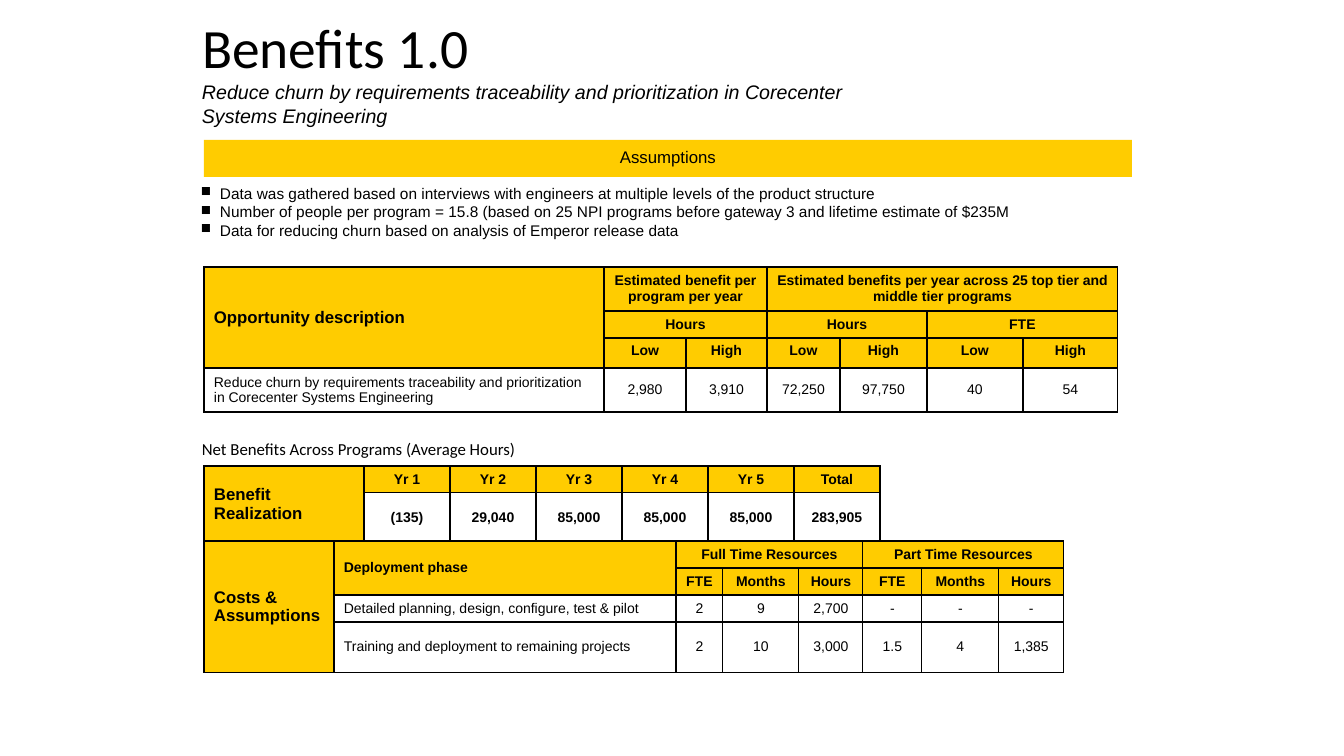
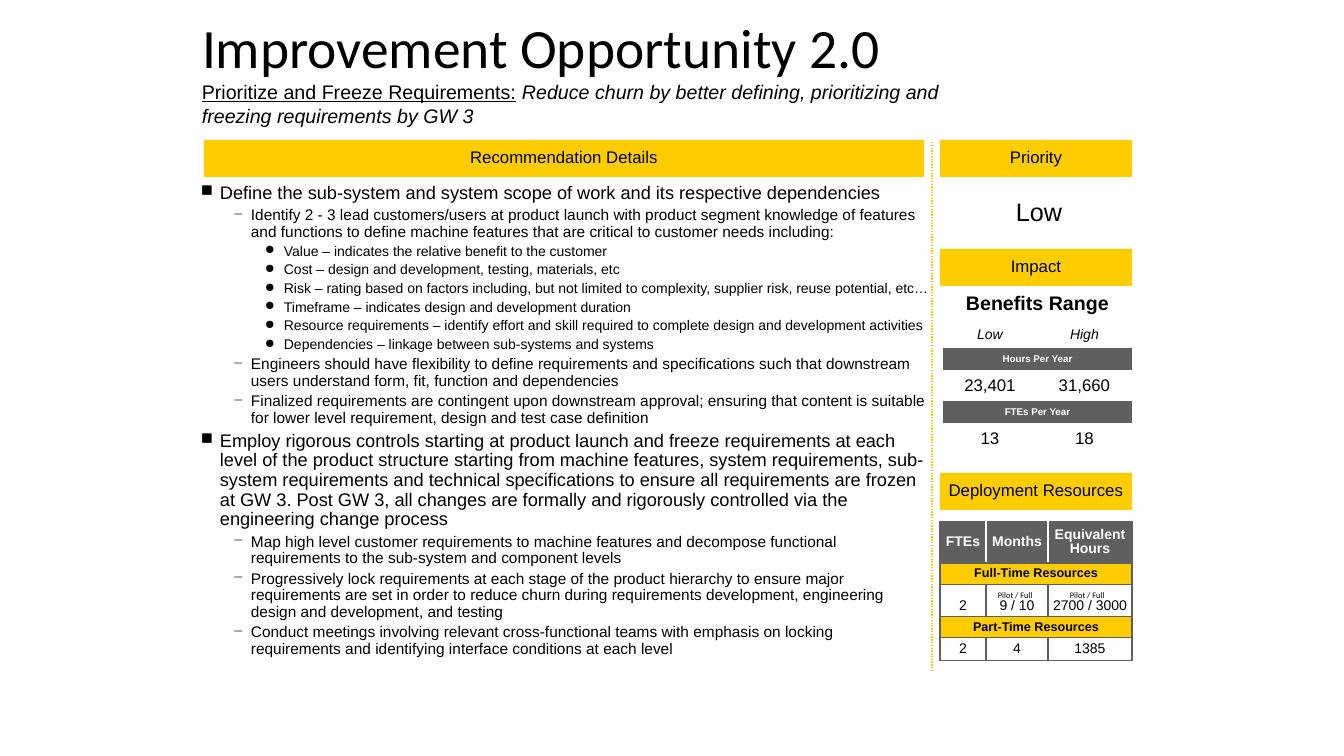
import dataclasses
import functools

import lxml.etree
import pptx
import pptx.dml.color
import pptx.enum.dml
import pptx.enum.shapes
import pptx.enum.text
import pptx.oxml.ns
import pptx.util

PX = 914400 / 100.8
YELLOW, GREY, BLACK, WHITE = "FFCC00", "5F5F5F", "000000", "FFFFFF"
NO_STYLE = "{2D5ABB26-0587-4C30-8999-92F81FD0307C}"
BAND_HEIGHT = 37
LEFT, RIGHT_COLUMN, RIGHT_EDGE = 204, 940, 1132
BAND_TOP = 140
LEVELS = {
    1: ("■", 31, 19, 13),
    2: ("−", 62, 18, 11),
    3: ("●", 95, 19, 10),
}
Align = pptx.enum.text.PP_ALIGN
Anchor = pptx.enum.text.MSO_ANCHOR
qn = pptx.oxml.ns.qn


def px(n):
    return pptx.util.Emu(round(n * PX))


def color(value):
    return pptx.dml.color.RGBColor.from_string(value)


def child(parent, tag, **attributes):
    return lxml.etree.SubElement(parent, qn(tag), attributes)


def format_text(tf, size, font="Arial", ink=BLACK, bold=False, italic=False,
                align=Align.LEFT, spacing=None):
    for p in tf.paragraphs:
        p.alignment = align
        p.line_spacing = spacing
        for r in p.runs:
            r.font.name = font
            r.font.size = pptx.util.Pt(size)
            r.font.bold = bold
            r.font.italic = italic
            r.font.color.rgb = color(ink)


def set_margins(target, x, y):
    target.margin_left = target.margin_right = px(x)
    target.margin_top = target.margin_bottom = px(y)


def text_box(s, box, text, size, wrap=True, anchor=Anchor.TOP, **look):
    tf = s.shapes.add_textbox(*map(px, box)).text_frame
    tf.word_wrap = wrap
    tf.vertical_anchor = anchor
    tf.text = text
    format_text(tf, size, **look)
    return tf


def heading(s, title, subtitle, width, lead=""):
    sp = s.shapes.title
    sp.left, sp.top, sp.width, sp.height = map(px, (192, 17, 789, 68))
    tf = sp.text_frame
    tf.text = title
    tf.auto_size = pptx.enum.text.MSO_AUTO_SIZE.NONE
    tf.vertical_anchor = Anchor.MIDDLE
    format_text(tf, 39.6, "Calibri", spacing=0.9)

    tf = text_box(s, (192, 75, width, 57), lead, 14)
    p = tf.paragraphs[0]
    for r in p.runs:
        r.font.underline = True
    r = p.add_run()
    r.text = subtitle
    r.font.name, r.font.size, r.font.italic = "Arial", pptx.util.Pt(14), True
    r.font.color.rgb = color(BLACK)


def band(s, left, top, right, text):
    sp = s.shapes.add_shape(pptx.enum.shapes.MSO_SHAPE.RECTANGLE,
                            *map(px, (left, top, right - left, BAND_HEIGHT)))
    sp.shadow.inherit = False
    sp.fill.solid()
    sp.fill.fore_color.rgb = color(YELLOW)
    sp.line.fill.background()
    tf = sp.text_frame
    set_margins(tf, 0, 8)
    tf.vertical_anchor = Anchor.MIDDLE
    tf.text = text
    format_text(tf, 12, align=Align.CENTER, spacing=0.9)


def bullet_list(s, box, items, size=None, spacing=None, gap=0):
    tf = s.shapes.add_textbox(*map(px, box)).text_frame
    tf.word_wrap = True
    tf.margin_right = px(3)
    tf.text = "\n".join(text for level, text in items)
    format_text(tf, 11, spacing=spacing)
    for i, (p, (level, text)) in enumerate(zip(tf.paragraphs, items)):
        mark, indent, hanging, level_size = LEVELS[level]
        points = size or level_size
        p.runs[0].font.size = pptx.util.Pt(points)
        p.space_before = pptx.util.Pt(points * gap if i else 0)
        pPr = p._p.get_or_add_pPr()
        pPr.set("marL", str(px(indent)))
        pPr.set("indent", str(-px(hanging)))
        child(pPr, "a:buSzPct", val="90000")
        child(pPr, "a:buChar", char=mark)


@dataclasses.dataclass
class Cell:
    text: str = ""
    span: tuple = (1, 1)
    size: float = 10
    bold: bool = False
    italic: bool = False
    ink: str = BLACK
    fill: str = ""
    align: Align = Align.CENTER
    anchor: Anchor = Anchor.MIDDLE
    spacing: float = None


Head = functools.partial(Cell, bold=True, fill=YELLOW)
RowHead = functools.partial(Head, size=12, align=Align.LEFT)
Label = functools.partial(Cell, align=Align.LEFT)
HeadGrey = functools.partial(Cell, bold=True, fill=GREY, ink=WHITE)


def set_borders(cell, sides):
    tcPr = cell._tc.get_or_add_tcPr()
    for side in "LRTB":
        ln = child(tcPr, "a:ln" + side, w="12700")
        child(child(ln, "a:solidFill"), "a:srgbClr", val=sides[side])


def table(s, left, top, widths, heights, rows, border=None, margins=(10, 5),
          inner_head=None):
    box = left, top, sum(widths), sum(heights)
    frame = s.shapes.add_table(len(heights), len(widths), *map(px, box))
    t = frame.table
    t.first_row = t.horz_banding = False
    t._tbl.tblPr.find(qn("a:tableStyleId")).text = NO_STYLE
    for column, width in zip(t.columns, widths):
        column.width = px(width)
    for row, height in zip(t.rows, heights):
        row.height = px(height)
    for i, row in enumerate(rows):
        for j, content in enumerate(row):
            cell = t.cell(i, j)
            if border:
                sides = dict.fromkeys("LRTB", border)
                if inner_head and i == 0:
                    sides["L"] = inner_head if j else border
                    sides["R"] = inner_head if j < len(row) - 1 else border
                set_borders(cell, sides)
            if content is None:
                continue
            down, across = content.span
            if content.span != (1, 1):
                cell.merge(t.cell(i + down - 1, j + across - 1))
            set_margins(cell, *margins)
            cell.vertical_anchor = content.anchor
            cell.text_frame.text = content.text
            format_text(cell.text_frame, content.size, ink=content.ink, bold=content.bold,
                        italic=content.italic, align=content.align, spacing=content.spacing)
            if content.fill:
                cell.fill.solid()
                cell.fill.fore_color.rgb = color(content.fill)
            else:
                cell.fill.background()


def cells(kind, *texts, **look):
    return [kind(text, **look) for text in texts]


def opportunity_table(s, left, top):
    table(s, left, top, [400, 82, 81, 73, 87, 96, 95], [44, 27, 30, 44], [
        [RowHead("Opportunity description", (3, 1)),
         Head("Estimated benefit per program per year", (1, 2)), None,
         Head("Estimated benefits per year across 25 top tier and middle tier programs",
              (1, 4)), None, None, None],
        [None, Head("Hours", (1, 2)), None, Head("Hours", (1, 2)), None,
         Head("FTE", (1, 2)), None],
        [None] + cells(Head, *["Low", "High"] * 3, anchor=Anchor.TOP),
        [Label("Reduce churn by requirements traceability and prioritization "
               "in Corecenter Systems Engineering")]
        + cells(Cell, "2,980", "3,910", "72,250", "97,750", "40", "54"),
    ], BLACK)


def realization_table(s, left, top):
    table(s, left, top, [160] + [86] * 6, [26, 49], [
        [RowHead("Benefit Realization", (2, 1))]
        + cells(Head, "Yr 1", "Yr 2", "Yr 3", "Yr 4", "Yr 5", "Total"),
        [None] + cells(Cell, "(135)", "29,040", "85,000", "85,000", "85,000", "283,905",
                       bold=True),
    ], BLACK)


def costs_table(s, left, top):
    table(s, left, top, [130, 342, 47, 76, 64, 59, 77, 65], [27, 27, 27, 50], [
        [RowHead("Costs & Assumptions", (4, 1)),
         Head("Deployment phase", (2, 1), align=Align.LEFT),
         Head("Full Time Resources", (1, 3)), None, None,
         Head("Part Time Resources", (1, 3)), None, None],
        [None, None] + cells(Head, *["FTE", "Months", "Hours"] * 2),
        [None, Label("Detailed planning, design, configure, test & pilot")]
        + cells(Cell, "2", "9", "2,700", "-", "-", "-"),
        [None, Label("Training and deployment to remaining projects")]
        + cells(Cell, "2", "10", "3,000", "1.5", "4", "1,385"),
    ], BLACK)


def range_table(s, left, top):
    table(s, left, top, [94, 95], [33, 28, 22, 31, 22, 31], [
        [Cell("Benefits Range", (1, 2), 14, bold=True), None],
        cells(Cell, "Low", "High", italic=True),
        [HeadGrey("Hours Per Year", (1, 2), 7), None],
        cells(Cell, "23,401", "31,660", size=12),
        [HeadGrey("FTEs Per Year", (1, 2), 7), None],
        cells(Cell, "13", "18", size=12),
    ])


def resources_table(s, left, top):
    table(s, left, top, [46, 62, 84], [41, 21, 32, 21, 23], [
        cells(HeadGrey, "FTEs", "Months", "Equivalent Hours", spacing=0.9),
        [Head("Full-Time Resources", (1, 3), 9), None, None],
        cells(Cell, "2", "9 / 10", "2700 / 3000", anchor=Anchor.BOTTOM),
        [Head("Part-Time Resources", (1, 3), 9), None, None],
        cells(Cell, "2", "4", "1385"),
    ], GREY, (3, 3), WHITE)
    for offset in (48, 120):
        text_box(s, (left + offset, top + 63, 64, 20), "Pilot / Full", 6, font="Calibri")


def divider(s, x, top, bottom):
    line = s.shapes.add_connector(pptx.enum.shapes.MSO_CONNECTOR.STRAIGHT,
                                  *map(px, (x, top, x, bottom)))
    line.line.color.rgb = color(YELLOW)
    line.line.width = pptx.util.Pt(1)
    line.line.dash_style = pptx.enum.dml.MSO_LINE.ROUND_DOT
    child(line._element.spPr, "a:effectLst")


def benefits_slide(s):
    heading(s, "Benefits 1.0", "Reduce churn by requirements traceability and "
            "prioritization in Corecenter Systems Engineering", 700)
    band(s, LEFT, BAND_TOP, RIGHT_EDGE, "Assumptions")
    bullet_list(s, (179, 179, 949, 76), [
        (1, "Data was gathered based on interviews with engineers at multiple levels of the product structure"),
        (1, "Number of people per program = 15.8 (based on 25 NPI programs before gateway 3 and lifetime estimate of $235M"),
        (1, "Data for reducing churn based on analysis of Emperor release data"),
    ], size=11)
    opportunity_table(s, LEFT, 267)
    text_box(s, (192, 434, 338, 30), "Net Benefits Across Programs (Average Hours)", 12,
             wrap=False, font="Calibri")
    realization_table(s, LEFT, 466)
    costs_table(s, LEFT, 541)


def opportunity_slide(s):
    heading(s, "Improvement Opportunity 2.0", " Reduce churn by better defining, "
            "prioritizing and freezing requirements by GW 3", 818,
            "Prioritize and Freeze Requirements:")
    band(s, LEFT, BAND_TOP, 924, "Recommendation Details")
    bullet_list(s, (179, 179, 752, 444), [
        (1, "Define the sub-system and system scope of work and its respective dependencies"),
        (2, "Identify 2 - 3 lead customers/users at product launch with product segment knowledge of features and functions to define machine features that are critical to customer needs including:"),
        (3, "Value – indicates the relative benefit to the customer"),
        (3, "Cost – design and development, testing, materials, etc"),
        (3, "Risk – rating based on factors including, but not limited to complexity, supplier risk, reuse potential, etc…"),
        (3, "Timeframe – indicates design and development duration"),
        (3, "Resource requirements – identify effort and skill required to complete design and development activities"),
        (3, "Dependencies – linkage between sub-systems and systems"),
        (2, "Engineers should have flexibility to define requirements and specifications such that downstream users understand form, fit, function and dependencies"),
        (2, "Finalized requirements are contingent upon downstream approval; ensuring that content is suitable for lower level requirement, design and test case definition"),
        (1, "Employ rigorous controls starting at product launch and freeze requirements at each level of the product structure starting from machine features, system requirements, sub-system requirements and technical specifications to ensure all requirements are frozen at GW 3. Post GW 3, all changes are formally and rigorously controlled via the engineering change process"),
        (2, "Map high level customer requirements to machine features and decompose functional requirements to the sub-system and component levels"),
        (2, "Progressively lock requirements at each stage of the product hierarchy to ensure major requirements are set in order to reduce churn during requirements development, engineering design and development, and testing"),
        (2, "Conduct meetings involving relevant cross-functional teams with emphasis on locking requirements and identifying interface conditions at each level"),
    ], spacing=0.9, gap=0.25)
    divider(s, 932, 142, 671)
    for top, text in ((BAND_TOP, "Priority"), (249, "Impact"), (473, "Deployment Resources")):
        band(s, RIGHT_COLUMN, top, RIGHT_EDGE, text)
    text_box(s, (942, 195, 194, 36), "Low", 18, anchor=Anchor.MIDDLE,
             align=Align.CENTER, spacing=0.9)
    range_table(s, 943, 287)
    resources_table(s, RIGHT_COLUMN, 522)


def main():
    prs = pptx.Presentation()
    prs.slide_width, prs.slide_height = px(1344), px(756)
    for build in (benefits_slide, opportunity_slide):
        build(prs.slides.add_slide(prs.slide_layouts[5]))
    prs.save("out.pptx")


if __name__ == "__main__":
    main()
